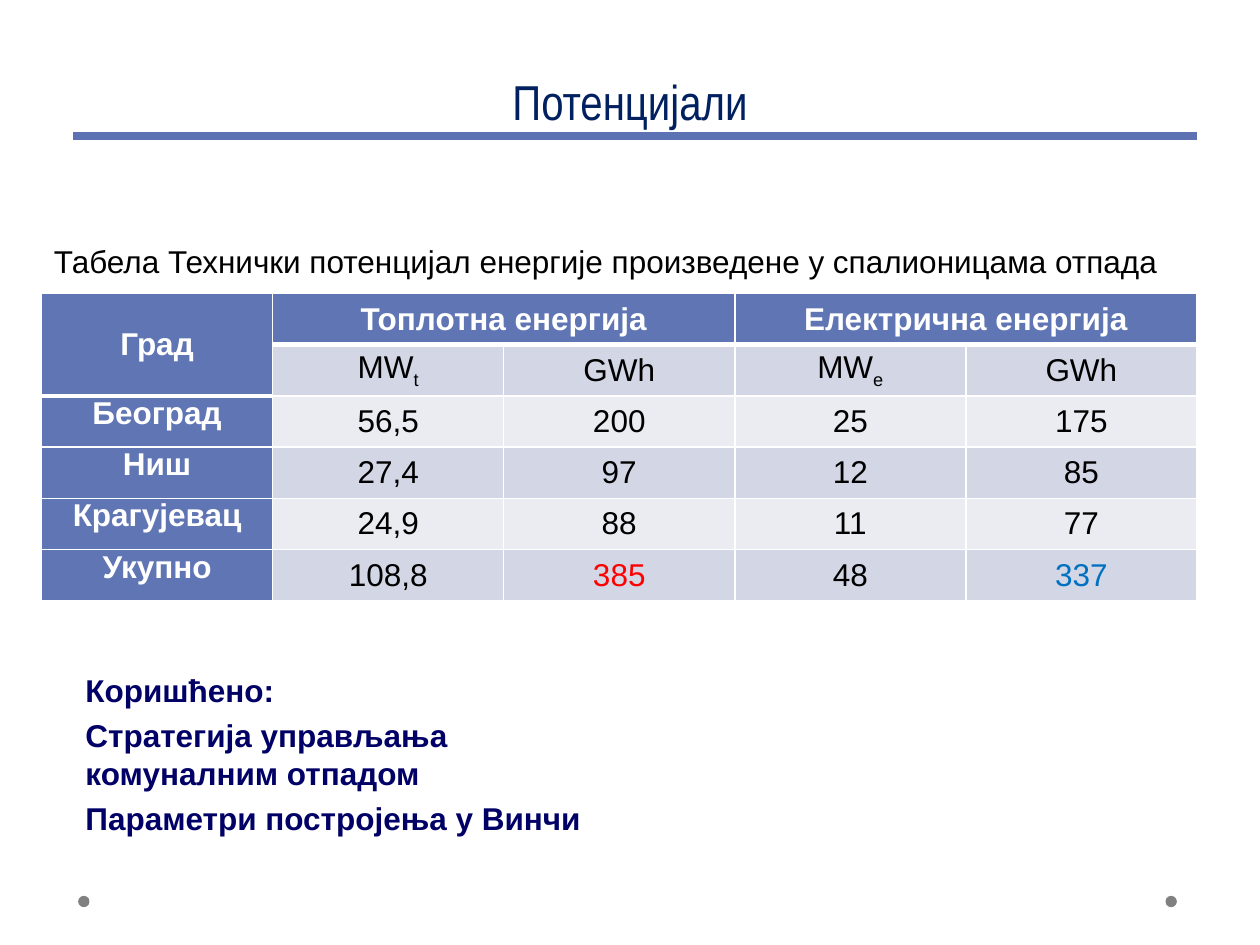
"""Build the slide on the technical potential of energy from waste incineration."""
from dataclasses import dataclass

from lxml import etree
from pptx import Presentation
from pptx import util as u
from pptx.dml.color import RGBColor
from pptx.enum import shapes, text
from pptx.oxml import ns

COLOURS = {
    "title": "002060", "rule": "5C72B2", "dot": "808080", "header": "6076B4",
    "band_dark": "D2D6E5", "band_light": "EAECF2", "white": "FFFFFF",
    "black": "000000", "note": "000066", "heat_total": "FF0000", "power_total": "0070C0",
}
CITIES = [
    ("Град", "Топлотна енергија", "", "Електрична енергија", ""),
    ("", "MW|t", "GWh", "MW|e", "GWh"),
    ("Београд", "56,5", "200", "25", "175"),
    ("Ниш", "27,4", "97", "12", "85"),
    ("Крагујевац", "24,9", "88", "11", "77"),
    ("Укупно", "108,8", "385", "48", "337"),
]
TOTALS = {(5, 2): "heat_total", (5, 4): "power_total"}
MERGES = [((0, 0), (1, 0)), ((0, 1), (0, 2)), ((0, 3), (0, 4))]


@dataclass
class TextBlock:
    """Text box with its place and look."""
    left: float
    top: float
    width: float
    height: float
    lines: tuple[str, ...]
    colour: str
    size: int = 18
    font: str = "Arial"
    bold: bool = False
    anchor: text.MSO_ANCHOR = text.MSO_ANCHOR.TOP
    paragraph_format: dict | None = None


BLOCKS = [
    TextBlock(0.5, 0, 9, 1.08, ("Потенцијали",), "title", 28, "Arial Narrow",
              anchor=text.MSO_ANCHOR.BOTTOM,
              paragraph_format={"alignment": text.PP_ALIGN.CENTER, "line_spacing": u.Pt(58)}),
    TextBlock(0.33, 1.87, 10.19, 0.4,
              ("Табела Технички потенцијал енергије произведене у спалионицама отпада",),
              "black", anchor=text.MSO_ANCHOR.MIDDLE),
    TextBlock(0.58, 5.28, 4.67, 1.8,
              ("Коришћено:", "Стратегија управљања комуналним отпадом",
               "Параметри постројења у Винчи"),
              "note", bold=True, paragraph_format={"space_before": u.Pt(4)}),
]


def rgb(name: str) -> RGBColor:
    """Return the named colour."""
    return RGBColor.from_string(COLOURS[name])


def set_all(target, values: dict) -> None:
    """Set every attribute in values on target."""
    for name, value in values.items():
        setattr(target, name, value)


def add_run(paragraph, words: str, colour: str, size: int = 18,
            font: str = "Arial", bold: bool = False):
    """Add a formatted run to a paragraph."""
    run = paragraph.add_run()
    run.text = words
    set_all(run.font, {"size": u.Pt(size), "name": font, "bold": bold})
    run.font.color.rgb = rgb(colour)
    return run


def add_block(slide, block: TextBlock) -> None:
    """Draw a text block."""
    shape = slide.shapes.add_textbox(*map(u.Inches, (block.left, block.top,
                                                     block.width, block.height)))
    frame = shape.text_frame
    set_all(frame, {"word_wrap": True, "vertical_anchor": block.anchor})
    for index, line in enumerate(block.lines):
        paragraph = frame.add_paragraph() if index else frame.paragraphs[0]
        set_all(paragraph, block.paragraph_format or {})
        add_run(paragraph, line, block.colour, block.size, block.font, block.bold)


def add_dot(slide, left: float) -> None:
    """Draw a footer dot."""
    shape = slide.shapes.add_shape(shapes.MSO_SHAPE.OVAL, u.Inches(left), u.Inches(7.11),
                                   u.Inches(0.09), u.Inches(0.09))
    shape.shadow.inherit = False
    shape.fill.solid()
    shape.fill.fore_color.rgb = rgb("dot")
    shape.line.fill.background()


def add_rule(slide) -> None:
    """Draw the line under the title."""
    line = slide.shapes.add_connector(shapes.MSO_CONNECTOR.STRAIGHT, u.Inches(0.58),
                                      u.Inches(1.08), u.Inches(9.5), u.Inches(1.08))
    line.line.color.rgb = rgb("rule")
    line.line.width = u.Pt(4.5)
    etree.SubElement(line._element.spPr, ns.qn("a:effectLst"))


def set_borders(cell, widths: dict[str, float]) -> None:
    """Give a cell white borders of the given point widths."""
    properties = cell._tc.get_or_add_tcPr()
    for side, width in widths.items():
        border = etree.SubElement(properties, ns.qn(f"a:ln{side}"), w=str(u.Pt(width)))
        fill = etree.SubElement(border, ns.qn("a:solidFill"))
        etree.SubElement(fill, ns.qn("a:srgbClr"), val=COLOURS["white"])


def format_cell(cell, row: int, column: int, words: str) -> None:
    """Fill in one table cell."""
    header = row == 0 or column == 0
    last_header_row = 1 if column == 0 else 0
    set_borders(cell, {"L": 1, "R": 1,
                       "T": 3 if row == last_header_row + 1 else 1,
                       "B": 3 if row <= last_header_row else 1})
    cell.fill.solid()
    band = "band_dark" if row % 2 else "band_light"
    cell.fill.fore_color.rgb = rgb("header" if header else band)
    top = column == 0 and row > 1
    set_all(cell, {"margin_left": u.Inches(0.07), "margin_right": u.Inches(0.07),
                   "margin_top": 0, "margin_bottom": 0,
                   "vertical_anchor": text.MSO_ANCHOR.TOP if top else text.MSO_ANCHOR.MIDDLE})
    if not words:
        return
    paragraph = cell.text_frame.paragraphs[0]
    paragraph.alignment = text.PP_ALIGN.CENTER
    colour = "white" if header else TOTALS.get((row, column), "black")
    base, _, subscript = words.partition("|")
    add_run(paragraph, base, colour, bold=header)
    if subscript:
        run = add_run(paragraph, subscript, colour)
        run._r.get_or_add_rPr().set("baseline", "-25000")


def add_energy_table(slide) -> None:
    """Draw the table of energy potential by city."""
    table = slide.shapes.add_table(len(CITIES), len(CITIES[0]), u.Inches(0.33), u.Inches(2.33),
                                   u.Inches(9.17), u.Inches(2.44)).table
    set_all(table, {"first_row": False, "horz_banding": False})
    for start, end in MERGES:
        table.cell(*start).merge(table.cell(*end))
    for row, values in enumerate(CITIES):
        for column, words in enumerate(values):
            format_cell(table.cell(row, column), row, column, words)


def main() -> None:
    """Build and save the presentation."""
    presentation = Presentation()
    set_all(presentation, {"slide_width": u.Inches(10), "slide_height": u.Inches(7.5)})
    slide = presentation.slides.add_slide(presentation.slide_layouts[6])
    for left in (9.25, 0.62):
        add_dot(slide, left)
    add_rule(slide)
    add_energy_table(slide)
    for block in BLOCKS:
        add_block(slide, block)
    presentation.save("out.pptx")


if __name__ == "__main__":
    main()
